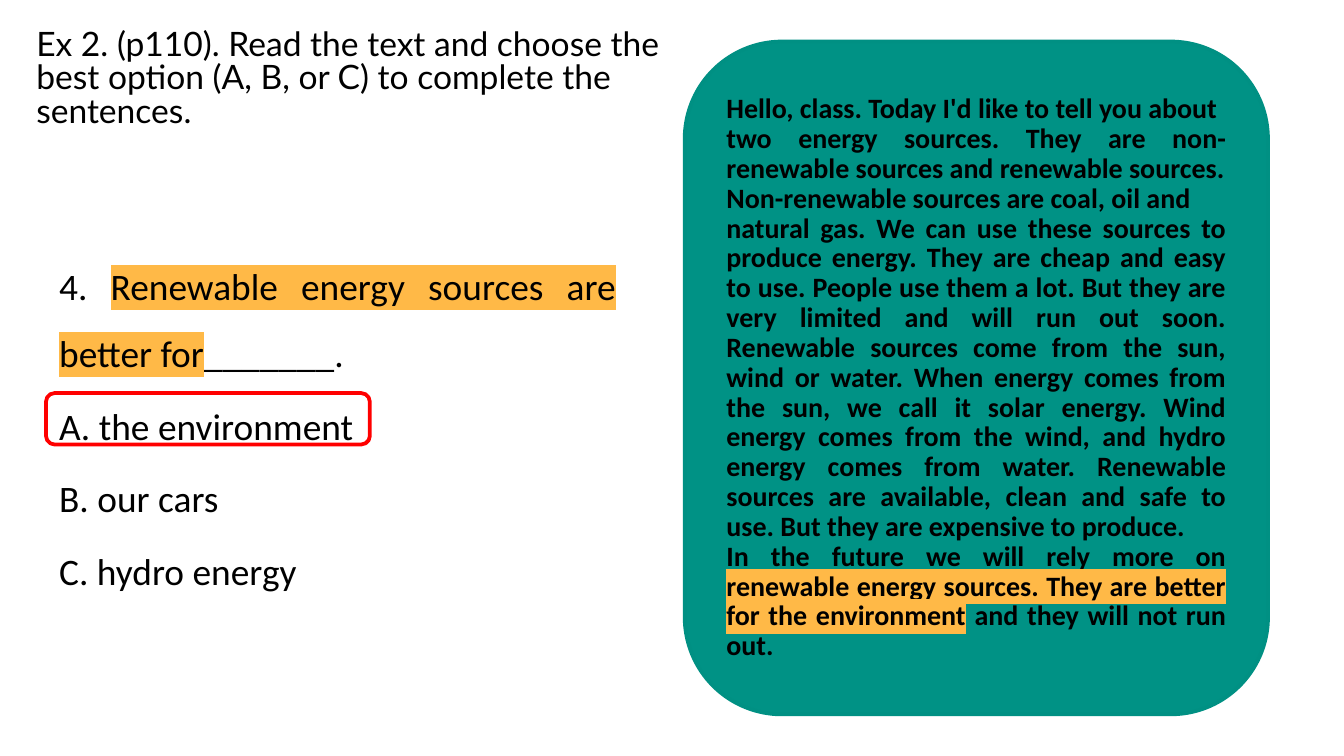
from dataclasses import dataclass

import pptx
import pptx.dml.color
import pptx.enum.shapes
import pptx.enum.text
import pptx.oxml
import pptx.oxml.ns
import pptx.util

Pt = pptx.util.Pt
Align = pptx.enum.text.PP_ALIGN
Anchor = pptx.enum.text.MSO_ANCHOR
SLIDE_WIDTH = pptx.util.Inches(10)
SLIDE_HEIGHT = SLIDE_WIDTH * 9 // 16


@dataclass(frozen=True)
class Theme:
    ink: str = "000000"
    panel: str = "009285"
    panel_edge: str = "009083"
    marker: str = "FFB947"
    answer: str = "FF0000"
    heading_font: str = "Lato"
    body_font: str = "Calibri"
    heading_size: int = 18
    passage_size: int = 15
    question_size: int = 20
    line_width: int = 2


@dataclass(frozen=True)
class Area:
    """A rectangle in percent of the slide's width and height."""
    left: float
    top: float
    width: float
    height: float

    def lengths(self) -> tuple:
        return (int(SLIDE_WIDTH * self.left / 100), int(SLIDE_HEIGHT * self.top / 100),
                int(SLIDE_WIDTH * self.width / 100), int(SLIDE_HEIGHT * self.height / 100))


@dataclass(frozen=True)
class TextStyle:
    font: str
    size: int
    align: Align
    line_spacing: object
    space_before: int = 0
    bold: bool = False


@dataclass(frozen=True)
class Line:
    """A paragraph whose middle part may be marked."""
    before: str
    marked: str = ""
    after: str = ""


THEME = Theme()
HEADING = TextStyle(THEME.heading_font, THEME.heading_size, Align.LEFT, Pt(18))
PASSAGE = TextStyle(THEME.body_font, THEME.passage_size, Align.JUSTIFY, Pt(16), bold=True)
QUESTION = TextStyle(THEME.body_font, THEME.question_size, Align.JUSTIFY, 1.5, space_before=3)

HEADING_LINES = [Line("Ex 2. (p110). Read the text and choose the best option "
                      "(A, B, or C) to complete the sentences.")]
PASSAGE_LINES = [
    Line("Hello, class. Today I'd like to tell you about"),
    Line("two energy sources. They are non-renewable sources and renewable sources."),
    Line("Non-renewable sources are coal, oil and"),
    Line("natural gas. We can use these sources to produce energy. They are cheap and easy "
         "to use. People use them a lot. But they are very limited and will run out soon. "
         "Renewable sources come from the sun, wind or water. When energy comes from the sun, "
         "we call it solar energy. Wind energy comes from the wind, and hydro energy comes "
         "from water. Renewable sources are available, clean and safe to use. But they are "
         "expensive to produce."),
    Line("In the future we will rely more on ",
         "renewable energy sources. They are better for the environment",
         " and they will not run out."),
]
QUESTION_LINES = [
    Line("4. ", "Renewable energy sources are better for", "_______."),
    Line("A. the environment"),
    Line("B. our cars"),
    Line("C. hydro energy"),
]


def rgb(value: str) -> pptx.dml.color.RGBColor:
    return pptx.dml.color.RGBColor.from_string(value)


def highlight(run, color: str) -> None:
    mark = pptx.oxml.parse_xml(
        f'<a:highlight {pptx.oxml.ns.nsdecls("a")}><a:srgbClr val="{color}"/></a:highlight>')
    run.font._element.append(mark)


def write(frame, lines: list[Line], style: TextStyle, anchor: Anchor) -> None:
    frame.word_wrap = True
    frame.auto_size = pptx.enum.text.MSO_AUTO_SIZE.NONE
    frame.vertical_anchor = anchor
    for index, line in enumerate(lines):
        paragraph = frame.add_paragraph() if index else frame.paragraphs[0]
        paragraph.alignment = style.align
        paragraph.line_spacing = style.line_spacing
        paragraph.space_before = Pt(style.space_before)
        paragraph.font.name = style.font
        paragraph.font.size = Pt(style.size)
        paragraph.font.bold = style.bold
        paragraph.font.color.rgb = rgb(THEME.ink)
        for part in filter(None, (line.before, line.marked, line.after)):
            run = paragraph.add_run()
            run.text = part
            if part == line.marked:
                highlight(run, THEME.marker)


def add_rounded(slide, area: Area, edge: str, fill: str | None = None):
    rounded = slide.shapes.add_shape(
        pptx.enum.shapes.MSO_SHAPE.ROUNDED_RECTANGLE, *area.lengths())
    rounded.shadow.inherit = False
    rounded.line.color.rgb = rgb(edge)
    rounded.line.width = Pt(THEME.line_width)
    if fill:
        rounded.fill.solid()
        rounded.fill.fore_color.rgb = rgb(fill)
    else:
        rounded.fill.background()
    return rounded


def main() -> None:
    deck = pptx.Presentation()
    deck.slide_width, deck.slide_height = SLIDE_WIDTH, SLIDE_HEIGHT
    slide = deck.slides.add_slide(deck.slide_layouts.get_by_name("Title Only"))

    # Exercise heading
    heading = slide.shapes.title
    heading.left, heading.top, heading.width, heading.height = Area(1.7, 3, 49.3, 15.3).lengths()
    write(heading.text_frame, HEADING_LINES, HEADING, Anchor.TOP)

    # Reading passage
    passage = add_rounded(slide, Area(50.95, 5.5, 43.4, 89), THEME.panel_edge, THEME.panel)
    write(passage.text_frame, PASSAGE_LINES, PASSAGE, Anchor.MIDDLE)

    # Question with its options
    question = slide.shapes.add_textbox(*Area(3.42, 30.93, 43.4, 57.8).lengths())
    write(question.text_frame, QUESTION_LINES, QUESTION, Anchor.TOP)

    # Frame around the right answer
    add_rounded(slide, Area(3.42, 52, 24.1, 6.8), THEME.answer)

    deck.save("out.pptx")


if __name__ == "__main__":
    main()
